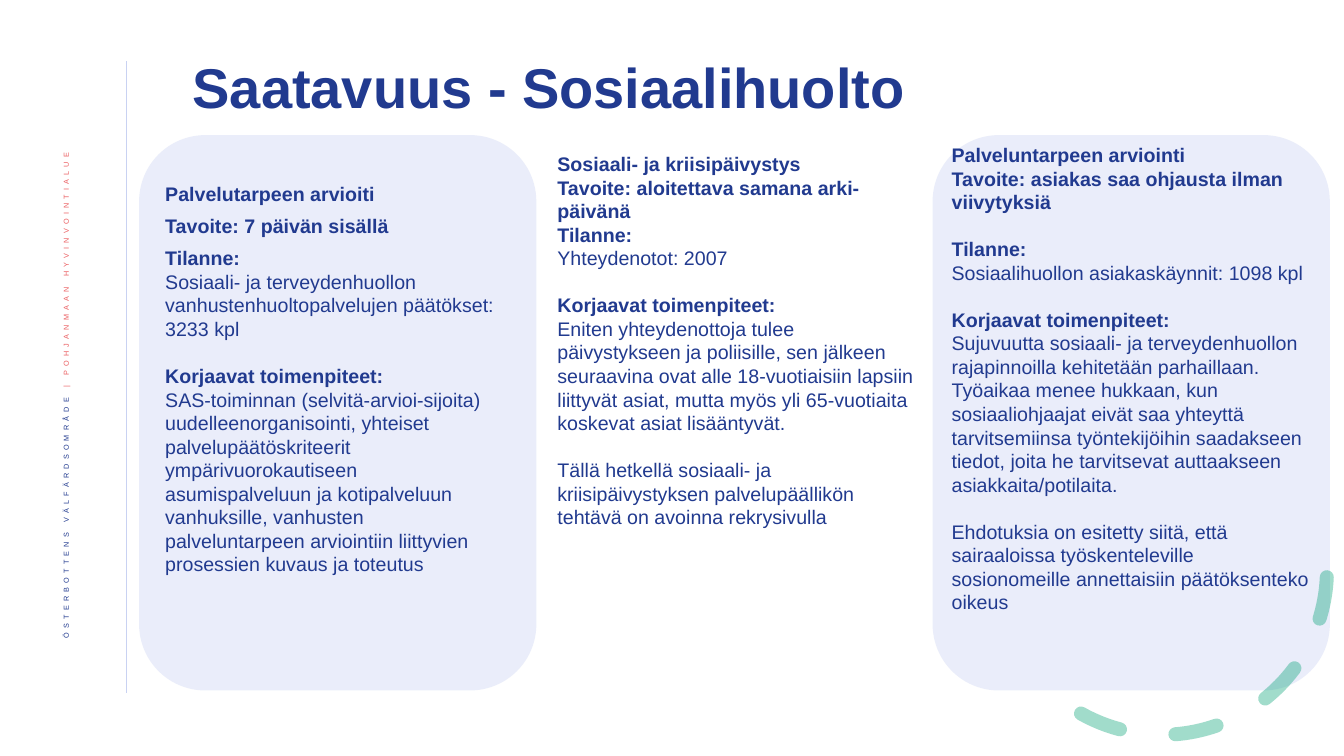
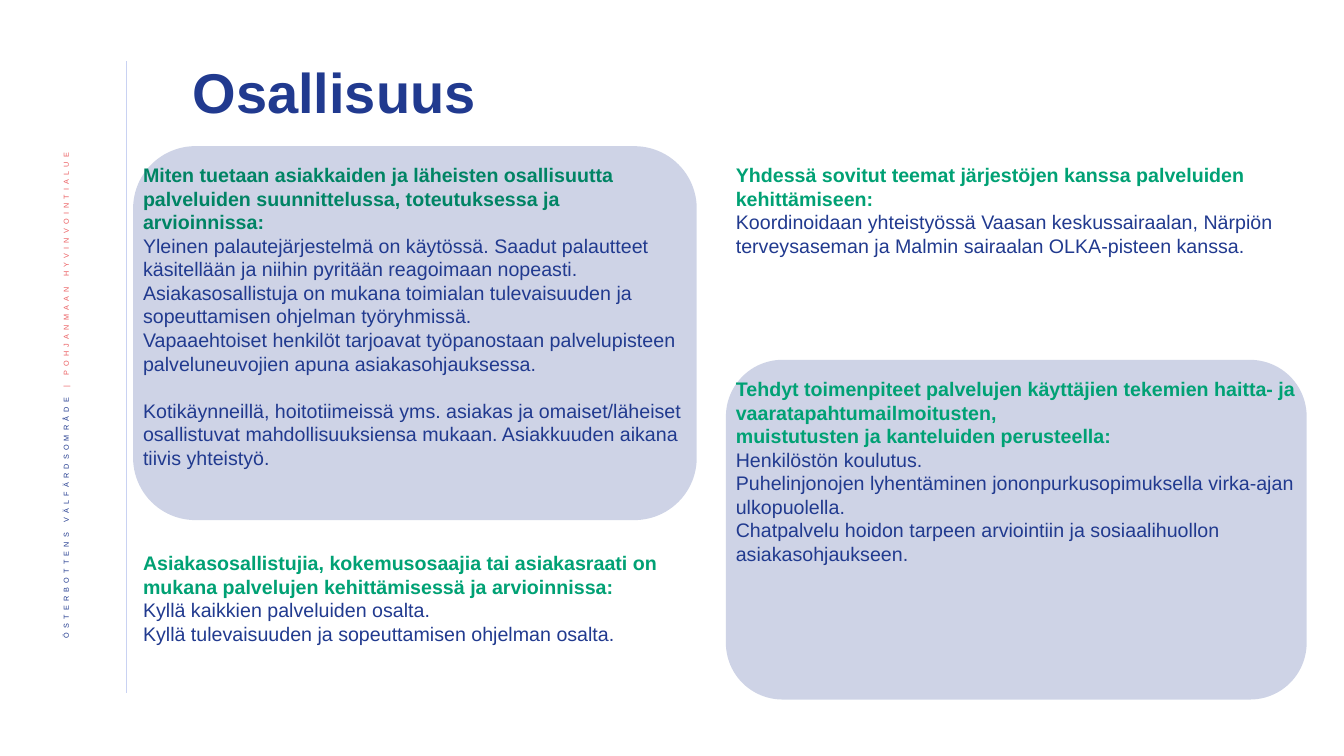
from lxml.etree import SubElement
from pptx import Presentation
from pptx.dml.color import RGBColor as RGB
from pptx.enum.dml import MSO_LINE as Dash
from pptx.enum.shapes import MSO_CONNECTOR as Wire, MSO_SHAPE as Form
from pptx.enum.text import MSO_ANCHOR as Anchor, MSO_AUTO_SIZE as Fit, PP_ALIGN as Align
from pptx.oxml.ns import qn
from pptx.util import Inches, Pt

NAVY = RGB(0x21, 0x3A, 0x8F)
PALE = RGB(0xC9, 0xD2, 0xF2)
GREEN = RGB(0x00, 0xA1, 0x74)
DEEP = RGB(0x00, 0x84, 0x64)
CORAL = RGB(0xEB, 0x5C, 0x5F)

LEAD = 16.8
FONTS = {
    "title": {"size": Pt(40), "bold": True, "color": NAVY},
    "side": {"size": Pt(9), "bold": False, "color": NAVY},
    "brand": {"size": Pt(9), "bold": False, "color": CORAL},
    "head": {"size": Pt(14), "bold": True, "color": NAVY},
    "green": {"size": Pt(14), "bold": True, "color": GREEN},
    "deep": {"size": Pt(14), "bold": True, "color": DEEP},
    "body": {"size": Pt(14), "bold": False, "color": NAVY},
}


def style(font, kind):
    font.name = "Arial"
    for key, value in FONTS[kind].items():
        if key == "color":
            font.color.rgb = value
        else:
            setattr(font, key, value)


def fade(fill, share):
    tone = fill.find(".//" + qn("a:srgbClr"))
    SubElement(tone, qn("a:alpha"), val=str(share * 1000))


class Deck:
    def __init__(self):
        self.file = Presentation()
        self.file.slide_width = Inches(13.33)
        self.file.slide_height = Inches(7.5)
        self.slide = None

    def start(self, title, spot):
        self.slide = self.file.slides.add_slide(self.file.slide_layouts[5])
        self.rule(1.25, 0.61, 6.88)
        self.side()
        self.title(title, spot)

    def rule(self, x, top, end):
        line = self.slide.shapes.add_connector(
            Wire.STRAIGHT, Inches(x), Inches(top), Inches(x), Inches(end))
        line.line.color.rgb = PALE
        line.line.width = Pt(0.5)
        SubElement(line._element.spPr, qn("a:effectLst"))

    def side(self):
        frame = self.frame((0.42, 1.42, 0.52, 5.73), Anchor.MIDDLE)
        frame._txBody.bodyPr.set("vert", "vert270")
        para = frame.paragraphs[0]
        para.alignment = Align.RIGHT
        para.line_spacing = 0.9
        for kind, text in (("side", "ÖSTERBOTTENS VÄLFÄRDSOMRÅDE "),
                           ("brand", "| POHJANMAAN HYVINVOINTIALUE")):
            run = para.add_run()
            run.text = text
            style(run.font, kind)
            props = run._r.get_or_add_rPr()
            props.set("baseline", "30000")
            props.set("spc", "300")

    def title(self, text, spot):
        shape = self.slide.shapes.title
        shape.left, shape.top, shape.width, shape.height = map(Inches, spot)
        frame = shape.text_frame
        frame.auto_size = Fit.NONE
        frame.vertical_anchor = Anchor.MIDDLE
        frame.text = text
        para = frame.paragraphs[0]
        para.alignment = Align.LEFT
        para.line_spacing = 0.9
        style(para.runs[0].font, "title")

    def card(self, spot, color, share):
        shape = self.slide.shapes.add_shape(Form.ROUNDED_RECTANGLE, *map(Inches, spot))
        shape.shadow.inherit = False
        shape.fill.solid()
        shape.fill.fore_color.rgb = color
        fade(shape._element.spPr, share)
        shape.line.fill.background()

    def arc(self, spot, turn, start, end):
        shape = self.slide.shapes.add_shape(Form.ARC, *map(Inches, spot))
        shape.shadow.inherit = False
        shape.rotation = turn
        for place, angle in enumerate((start, end)):
            shape.adjustments[place] = angle * 0.6
        shape.fill.background()
        line = shape.line
        line.color.rgb = GREEN
        line.width = Pt(10)
        line.dash_style = Dash.DASH
        edge = shape._element.spPr.find(qn("a:ln"))
        edge.set("cap", "rnd")
        fade(edge, 36)

    def frame(self, spot, anchor=Anchor.TOP):
        frame = self.slide.shapes.add_textbox(*map(Inches, spot)).text_frame
        frame.word_wrap = True
        frame.vertical_anchor = anchor
        return frame

    def text(self, spot, lines):
        frame = self.frame(spot)
        for place, (kind, text, *gap) in enumerate(lines):
            para = frame.add_paragraph() if place else frame.paragraphs[0]
            para.line_spacing = Pt(LEAD)
            if gap:
                para.space_before = Pt(gap[0])
            run = para.add_run()
            run.text = text
            style(run.font, kind)


def access(deck):
    deck.start("Saatavuus - Sosiaalihuolto", (1.81, 0.45, 7.44, 0.89))
    for left in (1.38, 9.25):
        deck.card((left, 1.34, 3.94, 5.51), PALE, 38)
    deck.arc((9.89, 4.02, 3.27, 3.27), 98.9, 263.62, 29.69)
    deck.text((1.54, 1.76, 3.6, 4), [
        ("head", "Palvelutarpeen arvioiti"),
        ("head", "Tavoite: 7 päivän sisällä", 6),
        ("head", "Tilanne:", 6),
        ("body", "Sosiaali- ja terveydenhuollon vanhustenhuoltopalvelujen "
                 "päätökset: 3233 kpl"),
        ("head", "Korjaavat toimenpiteet:", LEAD),
        ("body", "SAS-toiminnan (selvitä-arvioi-sijoita) uudelleenorganisointi, "
                 "yhteiset palvelupäätöskriteerit ympärivuorokautiseen "
                 "asumispalveluun ja kotipalveluun vanhuksille, vanhusten "
                 "palveluntarpeen arviointiin liittyvien prosessien kuvaus "
                 "ja toteutus"),
    ])
    deck.text((5.43, 1.46, 3.82, 4.81), [
        ("head", "Sosiaali- ja kriisipäivystys"),
        ("head", "Tavoite: aloitettava samana arki-päivänä"),
        ("head", "Tilanne:"),
        ("body", "Yhteydenotot: 2007"),
        ("head", "Korjaavat toimenpiteet:", LEAD),
        ("body", "Eniten yhteydenottoja tulee päivystykseen ja poliisille, sen "
                 "jälkeen seuraavina ovat alle 18-vuotiaisiin lapsiin liittyvät "
                 "asiat, mutta myös yli 65-vuotiaita koskevat asiat lisääntyvät."),
        ("body", "Tällä hetkellä sosiaali- ja kriisipäivystyksen "
                 "palvelupäällikön tehtävä on avoinna rekrysivulla", LEAD),
    ])
    deck.text((9.34, 1.37, 3.78, 4.8), [
        ("head", "Palveluntarpeen arviointi"),
        ("head", "Tavoite: asiakas saa ohjausta ilman viivytyksiä"),
        ("head", "Tilanne:", LEAD),
        ("body", "Sosiaalihuollon asiakaskäynnit: 1098 kpl"),
        ("head", "Korjaavat toimenpiteet:", LEAD),
        ("body", "Sujuvuutta sosiaali- ja terveydenhuollon rajapinnoilla "
                 "kehitetään parhaillaan. Työaikaa menee hukkaan, kun "
                 "sosiaaliohjaajat eivät saa yhteyttä tarvitsemiinsa "
                 "työntekijöihin saadakseen tiedot, joita he tarvitsevat "
                 "auttaakseen asiakkaita/potilaita."),
        ("body", "Ehdotuksia on esitetty siitä, että sairaaloissa "
                 "työskenteleville sosionomeille annettaisiin päätöksenteko "
                 "oikeus", LEAD),
    ])


def voice(deck):
    deck.start("Osallisuus", (1.81, 0.45, 9.98, 0.99))
    deck.card((7.2, 3.57, 5.76, 3.37), NAVY, 22)
    deck.card((1.32, 1.45, 5.59, 3.71), NAVY, 22)
    deck.text((1.32, 1.57, 5.59, 3.16), [
        ("deep", "Miten tuetaan asiakkaiden ja läheisten osallisuutta palveluiden "
                 "suunnittelussa, toteutuksessa ja arvioinnissa:"),
        ("body", "Yleinen palautejärjestelmä on käytössä. Saadut palautteet "
                 "käsitellään ja niihin pyritään reagoimaan nopeasti."),
        ("body", "Asiakasosallistuja on mukana toimialan tulevaisuuden ja "
                 "sopeuttamisen ohjelman työryhmissä."),
        ("body", "Vapaaehtoiset henkilöt tarjoavat työpanostaan palvelupisteen "
                 "palveluneuvojien apuna asiakasohjauksessa."),
        ("body", "Kotikäynneillä, hoitotiimeissä yms. asiakas ja omaiset/läheiset "
                 "osallistuvat mahdollisuuksiensa mukaan. Asiakkuuden aikana "
                 "tiivis yhteistyö.", LEAD),
    ])
    deck.text((7.2, 1.57, 5.76, 1.04), [
        ("green", "Yhdessä sovitut teemat järjestöjen kanssa palveluiden "
                  "kehittämiseen:"),
        ("body", "Koordinoidaan yhteistyössä Vaasan keskussairaalan, Närpiön "
                 "terveysaseman ja Malmin sairaalan OLKA-pisteen kanssa."),
    ])
    deck.text((1.32, 5.42, 5.59, 1.51), [
        ("green", "Asiakasosallistujia, kokemusosaajia tai asiakasraati on mukana "
                  "palvelujen kehittämisessä ja arvioinnissa:"),
        ("body", "Kyllä kaikkien palveluiden osalta."),
        ("body", "Kyllä tulevaisuuden ja sopeuttamisen ohjelman osalta."),
    ])
    deck.text((7.2, 3.69, 5.76, 2.22), [
        ("green", "Tehdyt toimenpiteet palvelujen käyttäjien tekemien haitta- ja "
                  "vaaratapahtumailmoitusten,"),
        ("green", "muistutusten ja kanteluiden perusteella:"),
        ("body", "Henkilöstön koulutus."),
        ("body", "Puhelinjonojen lyhentäminen jononpurkusopimuksella virka-ajan "
                 "ulkopuolella."),
        ("body", "Chatpalvelu hoidon tarpeen arviointiin ja sosiaalihuollon "
                 "asiakasohjaukseen."),
    ])


def main():
    deck = Deck()
    access(deck)
    voice(deck)
    deck.file.save("out.pptx")


if __name__ == "__main__":
    main()
